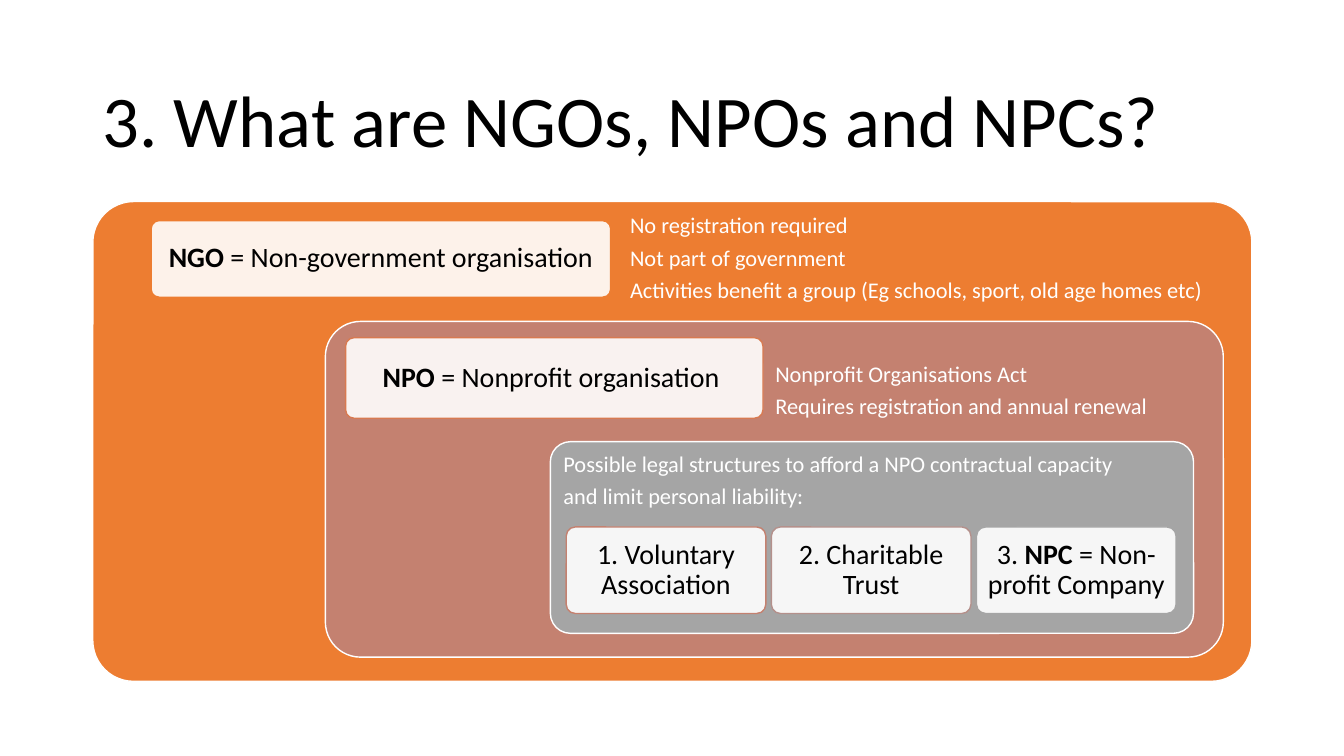
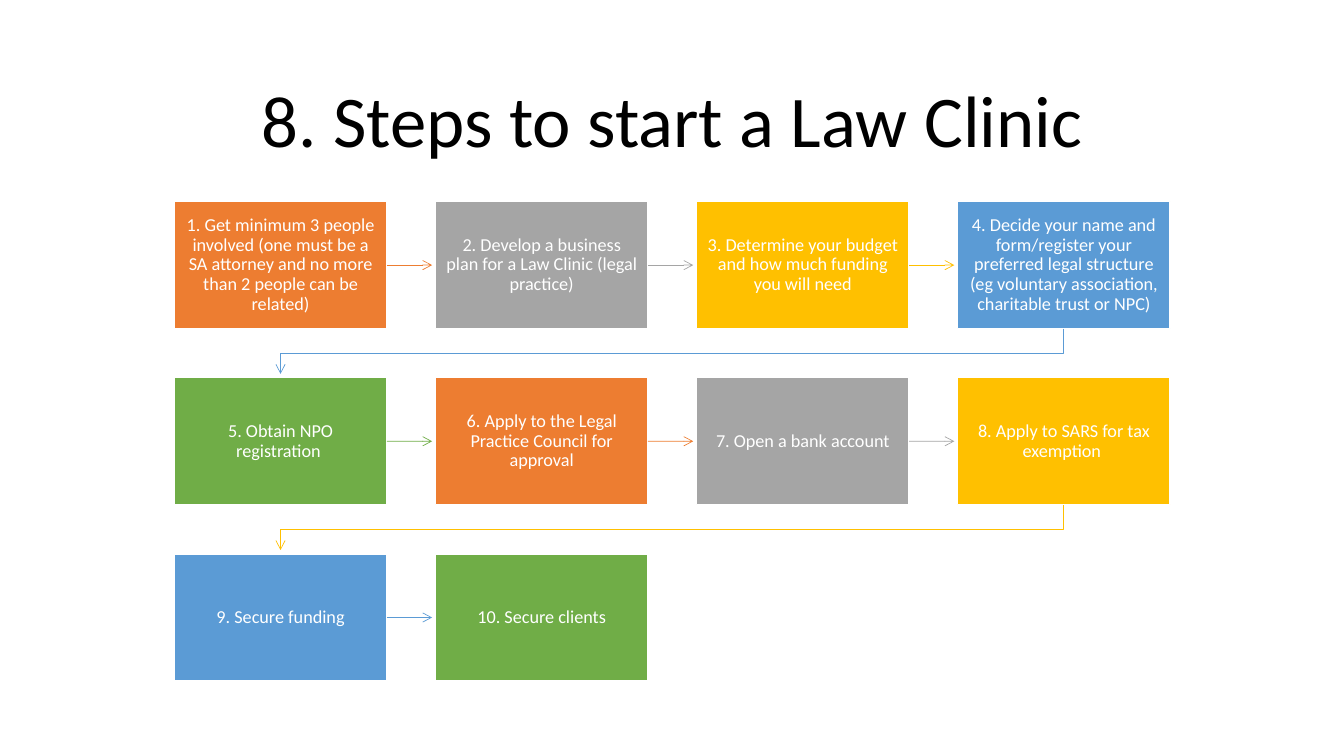
from lxml.etree import SubElement
from pptx import Presentation
from pptx.dml.color import RGBColor
from pptx.enum.shapes import MSO_CONNECTOR, MSO_SHAPE
from pptx.enum.text import MSO_ANCHOR, PP_ALIGN
from pptx.oxml.ns import qn
from pptx.util import Cm, Pt

FONT = "Calibri"
BLACK = RGBColor(0x00, 0x00, 0x00)
WHITE = RGBColor(0xFF, 0xFF, 0xFF)
ORANGE = RGBColor(0xED, 0x7D, 0x31)
GREY = RGBColor(0xA5, 0xA5, 0xA5)
GOLD = RGBColor(0xFF, 0xC0, 0x00)
BLUE = RGBColor(0x5B, 0x9B, 0xD5)
GREEN = RGBColor(0x70, 0xAD, 0x47)
ROSE = RGBColor(0xC4, 0x81, 0x70)
RUST = RGBColor(0xD8, 0x7A, 0x51)
TAUPE = RGBColor(0xB4, 0x90, 0x8B)


def write_text(shape, paragraphs, size, color, alignment, margin, anchor=MSO_ANCHOR.MIDDLE):
    """Write paragraphs, each a list of (text, bold) runs."""
    frame = shape.text_frame
    frame.word_wrap = True
    frame.vertical_anchor = anchor
    frame.margin_left = frame.margin_right = Cm(margin)
    frame.margin_top = frame.margin_bottom = Cm(margin)
    for index, runs in enumerate(paragraphs):
        paragraph = frame.add_paragraph() if index else frame.paragraphs[0]
        paragraph.alignment = alignment
        paragraph.line_spacing = 0.9
        if index < len(paragraphs) - 1:
            paragraph.space_after = Pt(size * 0.35)
        for text, bold in runs:
            run = paragraph.add_run()
            run.text = text
            run.font.name = FONT
            run.font.size = Pt(size)
            run.font.bold = bold
            run.font.color.rgb = color


def add_box(slide, kind, position, fill, line, corner=None):
    shape = slide.shapes.add_shape(kind, *[Cm(value) for value in position])
    shape.shadow.inherit = False
    shape.fill.solid()
    shape.fill.fore_color.rgb = fill
    shape.line.color.rgb = line
    shape.line.width = Pt(1)
    if corner is not None:
        shape.adjustments[0] = corner
    return shape


presentation = Presentation()
presentation.slide_width = Cm(33.87)
presentation.slide_height = Cm(19.05)

# Slides with their titles
slides = []
for title, alignment in [
    ("3. What are NGOs, NPOs and NPCs?", PP_ALIGN.LEFT),
    ("8. Steps to start a Law Clinic", PP_ALIGN.CENTER),
]:
    slide = presentation.slides.add_slide(presentation.slide_layouts[6])
    title_box = slide.shapes.add_textbox(Cm(2.33), Cm(1.55), Cm(29.21), Cm(3.15))
    write_text(title_box, [[(title, False)]], 52, BLACK, alignment, 0.25)
    slides.append(slide)
structure_slide, steps_slide = slides

# Nested panels
for position, fill, line, corner in [
    ((2.34, 5.08, 29.21, 12.09), ORANGE, WHITE, 0.085),
    ((8.2, 8.1, 22.63, 8.46), ROSE, WHITE, 0.105),
    ((13.87, 11.13, 16.21, 4.83), GREY, WHITE, 0.105),
]:
    add_box(structure_slide, MSO_SHAPE.ROUNDED_RECTANGLE, position, fill, line, corner)

# Notes on the panels
for position, lines in [
    ((15.88, 5.41, 15.4, 2.5), [
        "No registration required",
        "Not part of government",
        "Activities benefit a group (Eg schools, sport, old age homes etc)",
    ]),
    ((19.54, 9.16, 11, 1.6), [
        "Nonprofit Organisations Act",
        "Requires registration and annual renewal",
    ]),
    ((14.2, 11.43, 15.5, 1.6), [
        "Possible legal structures to afford a NPO contractual capacity",
        "and limit personal liability:",
    ]),
]:
    note = structure_slide.shapes.add_textbox(*[Cm(value) for value in position])
    write_text(note, [[(text, False)] for text in lines], 16, WHITE,
               PP_ALIGN.LEFT, 0, MSO_ANCHOR.TOP)

# Translucent cards: two headings and a row of three legal structures
legal_left, legal_pitch = 14.27, 5.17
legal_positions = [(legal_left + index * legal_pitch, 13.28, 5.03, 2.18) for index in range(3)]
for position, line, runs in [
    ((3.81, 5.56, 11.58, 1.93), ORANGE,
     [("NGO", True), (" = Non-government organisation", False)]),
    ((8.71, 8.51, 10.52, 2.03), RUST,
     [("NPO", True), (" = Nonprofit organisation ", False)]),
    (legal_positions[0], ROSE, [("1. Voluntary Association", False)]),
    (legal_positions[1], TAUPE, [("2. Charitable Trust", False)]),
    (legal_positions[2], GREY,
     [("3. ", False), ("NPC", True), (" = Non-profit Company", False)]),
]:
    card = add_box(structure_slide, MSO_SHAPE.ROUNDED_RECTANGLE, position, WHITE, line, 0.105)
    fill_color = card.element.spPr.find(qn("a:solidFill")).find(qn("a:srgbClr"))
    SubElement(fill_color, qn("a:alpha"), val="90000")
    write_text(card, [runs], 20, BLACK, PP_ALIGN.CENTER, 0.18)

# Step grid
STEPS = [
    "1. Get minimum 3 people involved (one must be a SA attorney and no more "
    "than 2 people can be related)",
    "2. Develop a business plan for a Law Clinic (legal practice)",
    "3. Determine your budget and how much funding you will need",
    "4. Decide your name and form/register your preferred legal structure "
    "(eg voluntary association, charitable trust or NPC)",
    "5. Obtain NPO registration ",
    "6. Apply to the Legal Practice Council for approval",
    "7. Open a bank account",
    "8. Apply to SARS for tax exemption ",
    "9. Secure funding",
    "10. Secure clients",
]
STEP_COLORS = [ORANGE, GREY, GOLD, BLUE, GREEN]
COLUMNS = 4
grid_left, grid_top = 4.39, 5.08
step_width, step_height = 5.36, 3.2
column_pitch, row_pitch = 6.58, 4.44
arrow_length, elbow_drop = 1.14, 0.63

arrows = []
for index, text in enumerate(STEPS):
    row, column = divmod(index, COLUMNS)
    left = grid_left + column * column_pitch
    top = grid_top + row * row_pitch
    color = STEP_COLORS[index % len(STEP_COLORS)]
    step = add_box(steps_slide, MSO_SHAPE.RECTANGLE,
                   (left, top, step_width, step_height), color, WHITE)
    write_text(step, [[(text, False)]], 13, WHITE, PP_ALIGN.CENTER, 0.25)

    if index == len(STEPS) - 1:
        continue
    if column < COLUMNS - 1:
        right, middle = left + step_width, top + step_height / 2
        arrow = steps_slide.shapes.add_connector(
            MSO_CONNECTOR.STRAIGHT, Cm(right), Cm(middle), Cm(right + arrow_length), Cm(middle))
        arrow.begin_connect(step, 3)
    else:
        # Elbow back to the first step of the next row
        start, end = left + step_width / 2, grid_left + step_width / 2
        bottom = top + step_height
        builder = steps_slide.shapes.build_freeform(Cm(start), Cm(bottom))
        builder.add_line_segments([
            (Cm(start), Cm(bottom + elbow_drop)),
            (Cm(end), Cm(bottom + elbow_drop)),
            (Cm(end), Cm(bottom + arrow_length)),
        ], close=False)
        arrow = builder.convert_to_shape()
        arrow.fill.background()
    arrows.append((arrow, color))

# Arrow lines and heads
for arrow, color in arrows:
    arrow.line.color.rgb = color
    arrow.line.width = Pt(0.5)
    properties = arrow.element.spPr
    SubElement(properties.find(qn("a:ln")), qn("a:tailEnd"), type="arrow")
    SubElement(properties, qn("a:effectLst"))

presentation.save("out.pptx")
